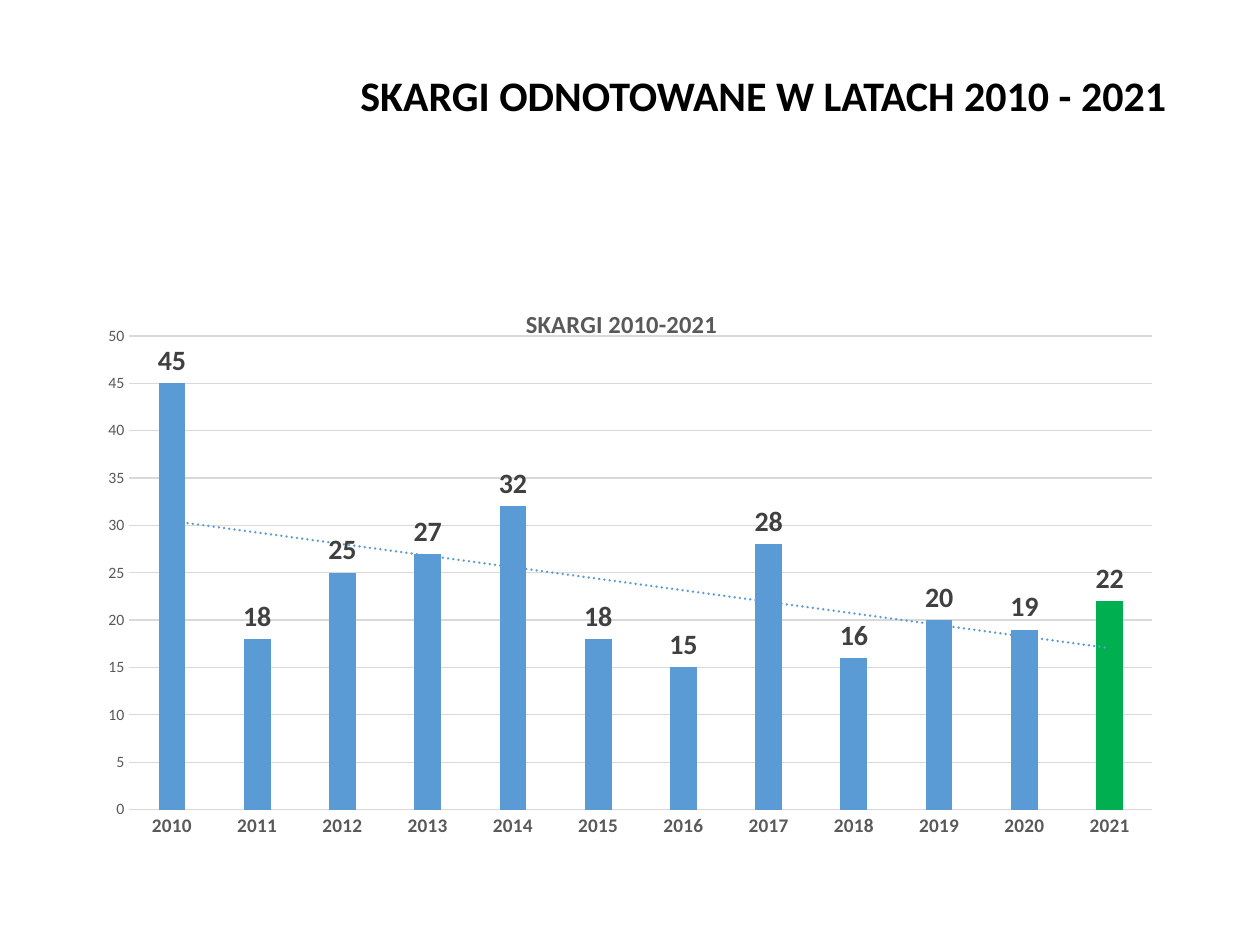
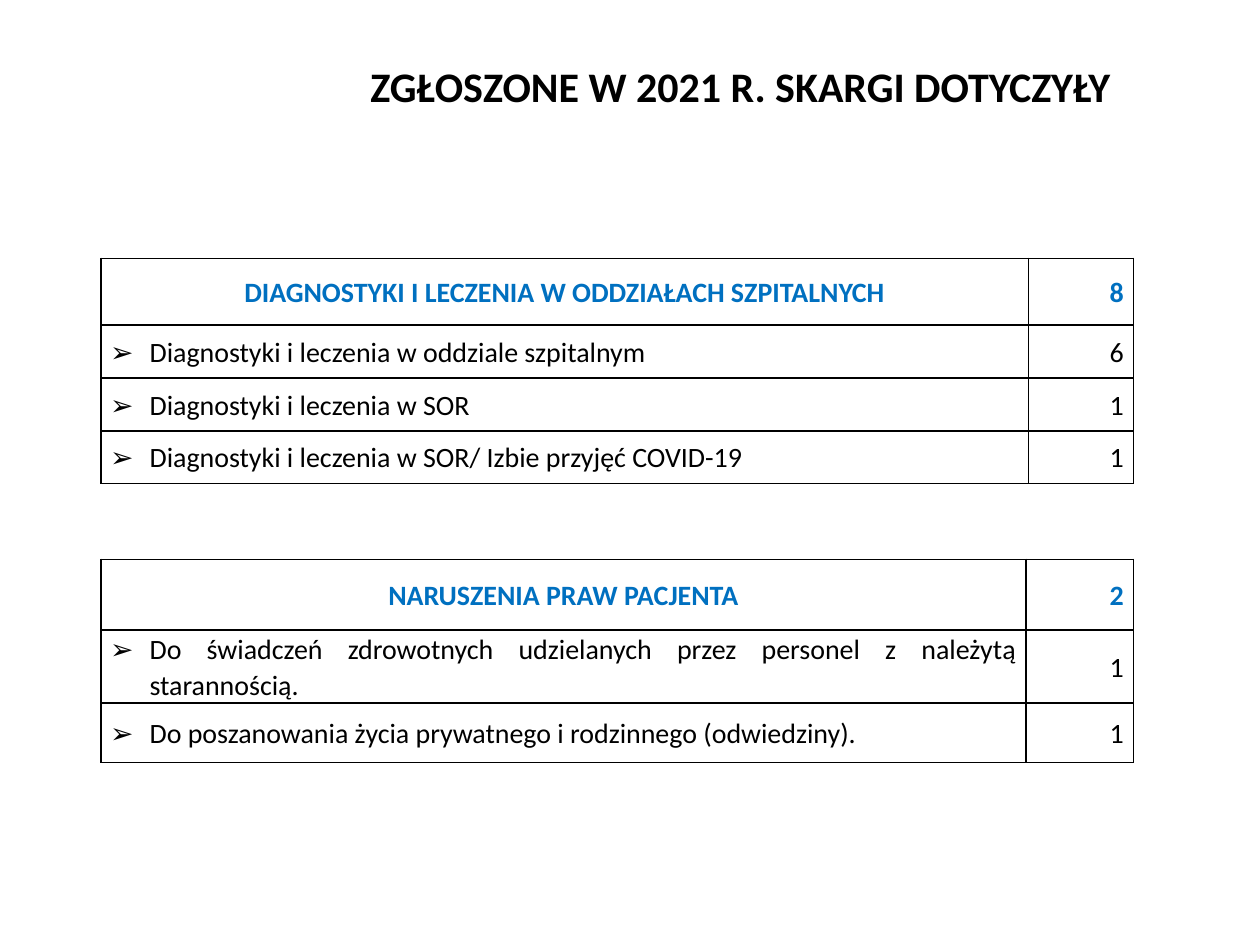
from lxml import etree
from pptx import Presentation
from pptx.chart.data import CategoryChartData
from pptx.dml.color import RGBColor
from pptx.enum import chart as ch, text as tx
from pptx.oxml import parse_xml
from pptx.oxml.ns import nsdecls, qn
from pptx.util import Pt

FONT = "Calibri"
BLACK = RGBColor(0, 0, 0)
BLUE = RGBColor(0x00, 0x70, 0xC0)
BAR = RGBColor(0x5B, 0x9B, 0xD5)
GREEN = RGBColor(0x00, 0xB0, 0x50)
GRAY = RGBColor(0x59, 0x59, 0x59)
DARK = RGBColor(0x40, 0x40, 0x40)
GRID = RGBColor(0xD9, 0xD9, 0xD9)
ALIGN = tx.PP_ALIGN


def style(font, size, color, bold=False):
    font.name, font.size, font.bold = FONT, Pt(size), bold
    font.color.rgb = color


def place(node, index, **parts):
    """Give a chart part a manual layout, in fractions of the chart."""
    for old in node.findall(qn("c:layout")):
        node.remove(old)
    inner = '<c:layoutTarget val="inner"/>' if "w" in parts else ""
    modes = "".join(f'<c:{k}Mode val="edge"/>' for k in "xy")
    sizes = "".join(f'<c:{k} val="{v}"/>' for k, v in parts.items())
    node.insert(index, parse_xml(
        f'<c:layout {nsdecls("c")}><c:manualLayout>{inner}{modes}{sizes}'
        "</c:manualLayout></c:layout>"))


deck = Presentation()
deck.slide_width, deck.slide_height = Pt(720), Pt(540)

# Slides and titles: wording, left, top, width, height, bottom inset
TITLES = [
    ("SKARGI ODNOTOWANE W LATACH 2010 - 2021", 198.7, 28.8, 504.7, 54, 3.6),
    ("ZGŁOSZONE W 2021 R. SKARGI DOTYCZYŁY", 204.5, 41.8, 491.8, 46.8, 32),
]
slides = []
for words, left, top, width, height, inset in TITLES:
    slide = deck.slides.add_slide(deck.slide_layouts[5])
    slides.append(slide)
    title = slide.shapes.title
    title.left, title.top = Pt(left), Pt(top)
    title.width, title.height = Pt(width), Pt(height)
    frame = title.text_frame
    frame.auto_size = tx.MSO_AUTO_SIZE.NONE
    frame.vertical_anchor = tx.MSO_ANCHOR.MIDDLE
    frame.margin_bottom = Pt(inset)
    para = frame.paragraphs[0]
    para.alignment, para.line_spacing = ALIGN.LEFT, 0.9
    run = para.add_run()
    run.text = words
    style(run.font, 24, BLACK, True)

# Slide 1: complaints per year
data = CategoryChartData()
data.categories = [str(year) for year in range(2010, 2022)]
data.add_series("Series 1", [45, 18, 25, 27, 32, 18, 15, 28, 16, 20, 19, 22])
chart = slides[0].shapes.add_chart(
    ch.XL_CHART_TYPE.COLUMN_CLUSTERED,
    Pt(49.7), Pt(144), Pt(620.6), Pt(342.7), data).chart
style(chart.font, 10, BLACK)
chart.has_legend = False
chart.has_title = True
head = chart.chart_title
run = head.text_frame.paragraphs[0].add_run()
run.text = "SKARGI 2010-2021"
style(run.font, 14, GRAY, True)
place(head._element, 1, x=0.4, y=0.085)

plot = chart.plots[0]
plot.gap_width, plot.overlap, plot.vary_by_categories = 219, -27, False
place(plot._element.getparent(), 0, x=0.039, y=0.14, w=0.942, h=0.79)

years, count = chart.category_axis, chart.value_axis
for axis, size, bold in [(years, 11, True), (count, 9, False)]:
    axis.major_tick_mark = axis.minor_tick_mark = ch.XL_TICK_MARK.NONE
    style(axis.tick_labels.font, size, GRAY, bold)
count.minimum_scale, count.maximum_scale, count.major_unit = 0, 50, 5
count.has_major_gridlines = True
for line in (years.format.line, count.major_gridlines.format.line):
    line.color.rgb, line.width = GRID, Pt(0.75)
count.format.line.fill.background()

bars = plot.series[0]
bars.invert_if_negative = False
for part, color in [(bars, BAR), (bars.points[11], GREEN)]:
    part.format.fill.solid()
    part.format.fill.fore_color.rgb = color
labels = bars.data_labels
labels.show_value = True
labels.position = ch.XL_LABEL_POSITION.OUTSIDE_END
style(labels.font, 16, DARK, True)
bars._element.find(qn("c:cat")).addprevious(parse_xml(
    f'<c:trendline {nsdecls("c", "a")}><c:spPr><a:ln w="{Pt(1.5)}" cap="rnd">'
    f'<a:solidFill><a:srgbClr val="{BAR}"/></a:solidFill>'
    '<a:prstDash val="sysDot"/></a:ln></c:spPr>'
    '<c:trendlineType val="linear"/><c:dispRSqr val="0"/>'
    '<c:dispEq val="0"/></c:trendline>'))

# Slide 2: top, column widths, row heights, rows (first row is the heading)
TABLES = [
    (147.6, (530, 60), (38.2, 30.2, 30.2, 30.2), [
        ("DIAGNOSTYKI I LECZENIA W ODDZIAŁACH SZPITALNYCH", "8"),
        ("Diagnostyki i leczenia w oddziale szpitalnym", "6"),
        ("Diagnostyki i leczenia w SOR", "1"),
        ("Diagnostyki i leczenia w SOR/ Izbie przyjęć COVID-19", "1"),
    ]),
    (319.7, (528.8, 61.2), (40.3, 41.8, 34), [
        ("NARUSZENIA PRAW PACJENTA", "2"),
        ("Do świadczeń zdrowotnych udzielanych przez personel "
         "z należytą starannością.", "1"),
        ("Do poszanowania życia prywatnego i rodzinnego (odwiedziny).", "1"),
    ]),
]
for top, widths, heights, rows in TABLES:
    table = slides[1].shapes.add_table(
        len(rows), 2, Pt(57.6), Pt(top), Pt(sum(widths)), Pt(sum(heights))).table
    table.horz_banding = False
    for col, width in zip(table.columns, widths):
        col.width = Pt(width)
    for i, (row, height) in enumerate(zip(table.rows, heights)):
        row.height = Pt(height)
        for j, cell in enumerate(row.cells):
            cell.margin_left = cell.margin_right = Pt(5.4)
            cell.margin_top = cell.margin_bottom = 0
            cell.vertical_anchor = tx.MSO_ANCHOR.MIDDLE
            props = cell._tc.get_or_add_tcPr()
            for side in "LRTB":
                props.append(parse_xml(
                    f'<a:ln{side} {nsdecls("a")} w="{Pt(1)}"><a:solidFill>'
                    f'<a:srgbClr val="{BLACK}"/></a:solidFill></a:ln{side}>'))
            cell.fill.background()
            para = cell.text_frame.paragraphs[0]
            para.line_spacing = 1.07
            if j:
                para.alignment = ALIGN.RIGHT
            elif i == 0:
                para.alignment = ALIGN.CENTER
            else:
                para.alignment = ALIGN.JUSTIFY
                ppr = para._p.get_or_add_pPr()
                ppr.set("marL", str(Pt(22.5)))
                ppr.set("indent", str(-Pt(22.5)))
                etree.SubElement(ppr, qn("a:buFont")).set("typeface", "Wingdings")
                ppr[-1].set("typeface", FONT)
                etree.SubElement(ppr, qn("a:buChar")).set("char", "➢")
            run = para.add_run()
            run.text = rows[i][j]
            style(run.font, 16, BLACK if i else BLUE, i == 0)

deck.save("out.pptx")
